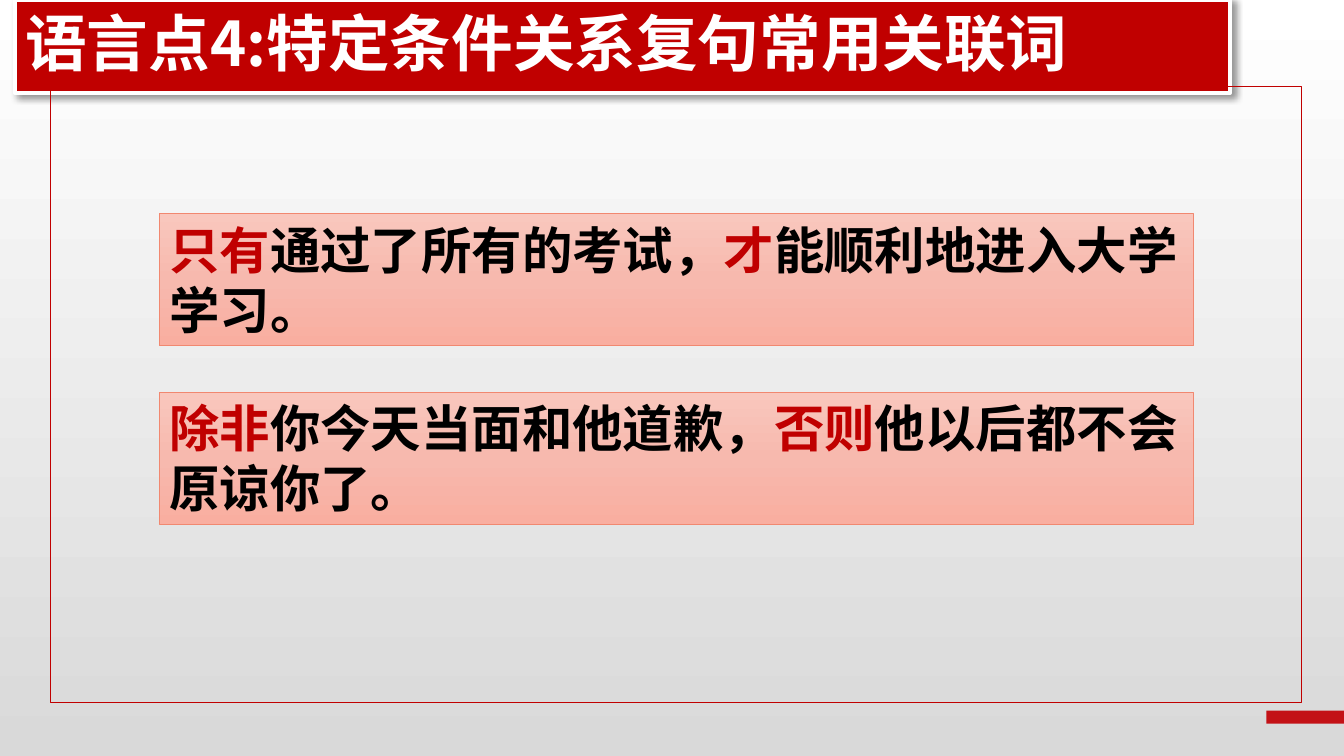
import copy

import lxml.etree
import pptx
import pptx.dml.color
import pptx.enum.shapes
import pptx.enum.text
import pptx.oxml.ns
import pptx.util

Inches = pptx.util.Inches
Pt = pptx.util.Pt
qn = pptx.oxml.ns.qn
RECTANGLE = pptx.enum.shapes.MSO_SHAPE.RECTANGLE
FONT = "Noto Sans CJK SC"
RED = "C00000"
BLACK = "000000"
WHITE = "FFFFFF"


def rgb(value):
    return pptx.dml.color.RGBColor.from_string(value)


def add_run(paragraph, text, size, color):
    run = paragraph.add_run()
    run.text = text
    run.font.size = Pt(size)
    run.font.bold = True
    run.font.name = FONT
    run.font.color.rgb = rgb(color)
    properties = run.font._element
    lxml.etree.SubElement(properties, qn("a:ea")).set("typeface", FONT)


presentation = pptx.Presentation()
presentation.slide_width = Inches(13.33)
presentation.slide_height = Inches(7.5)
slide = presentation.slides.add_slide(presentation.slide_layouts[5])

background = slide.background.fill
background.gradient()
background.gradient_angle = 270
for stop, color, position in zip(background.gradient_stops, [WHITE, "D9D9D9"], [0, 1]):
    stop.color.rgb = rgb(color)
    stop.position = position

title = slide.shapes.title
title.left, title.top = Inches(0.15), Inches(0)
title.width, title.height = Inches(12.05), Inches(0.92)
title.fill.solid()
title.fill.fore_color.rgb = rgb(RED)
title.line.color.rgb = rgb(WHITE)
title.line.width = Pt(3)
title.shadow.inherit = False
effects = title._element.spPr.find(qn("a:effectLst"))
shadow = lxml.etree.SubElement(effects, qn("a:outerShdw"))
shadow.set("blurRad", str(Pt(5)))
shadow.set("dist", str(Pt(3)))
shadow.set("dir", str(45 * 60000))
shadow.set("algn", "tl")
shadow.set("rotWithShape", "0")
shadow_color = lxml.etree.SubElement(shadow, qn("a:srgbClr"))
shadow_color.set("val", BLACK)
lxml.etree.SubElement(shadow_color, qn("a:alpha")).set("val", "40000")
title.text_frame.word_wrap = True
title.text_frame.auto_size = pptx.enum.text.MSO_AUTO_SIZE.NONE
title.text_frame.vertical_anchor = pptx.enum.text.MSO_ANCHOR.MIDDLE
paragraph = title.text_frame.paragraphs[0]
paragraph.alignment = pptx.enum.text.PP_ALIGN.LEFT
paragraph.line_spacing = 0.9
paragraph.space_before = Pt(0)
add_run(paragraph, "语言点4:特定条件关系复句常用关联词", 44, WHITE)

accent = slide.shapes.add_shape(RECTANGLE, Inches(12.56), Inches(7.05), Inches(0.78), Inches(0.13))
accent.shadow.inherit = False
accent.fill.solid()
accent.fill.fore_color.rgb = rgb("C31116")
accent.line.fill.background()

frame = slide.shapes.add_shape(RECTANGLE, Inches(0.5), Inches(0.86), Inches(12.41), Inches(6.11))
frame.shadow.inherit = False
frame.fill.background()
frame.line.color.rgb = rgb(RED)
frame.line.width = Pt(1)

examples = [
    (3.89, [("除非", RED), ("你今天当面和他道歉，", BLACK),
            ("否则", RED), ("他以后都不会原谅你了。", BLACK)]),
    (2.12, [("只有", RED), ("通过了所有的考试，", BLACK),
            ("才", RED), ("能顺利地进入大学学习。", BLACK)]),
]
for top, runs in examples:
    box = slide.shapes.add_shape(RECTANGLE, Inches(1.58), Inches(top), Inches(10.26), Inches(1.31))
    box.shadow.inherit = False
    box.fill.gradient()
    box.fill.gradient_angle = 270
    stop_list = box._element.spPr.find(qn("a:gradFill")).find(qn("a:gsLst"))
    stop_list.insert(1, copy.deepcopy(stop_list[0]))
    box_colors = ["F9C7BD", "F7B9AE", "F9AEA0"]
    for stop, color, position in zip(box.fill.gradient_stops, box_colors, [0, 0.5, 1]):
        stop.color.rgb = rgb(color)
        stop.position = position
    box.line.color.rgb = rgb("F18870")
    box.line.width = Pt(0.5)
    box.text_frame.word_wrap = True
    box.text_frame.auto_size = pptx.enum.text.MSO_AUTO_SIZE.SHAPE_TO_FIT_TEXT
    box.text_frame.vertical_anchor = pptx.enum.text.MSO_ANCHOR.TOP
    paragraph = box.text_frame.paragraphs[0]
    paragraph.alignment = pptx.enum.text.PP_ALIGN.LEFT
    for text, color in runs:
        add_run(paragraph, text, 36, color)

presentation.save("out.pptx")
